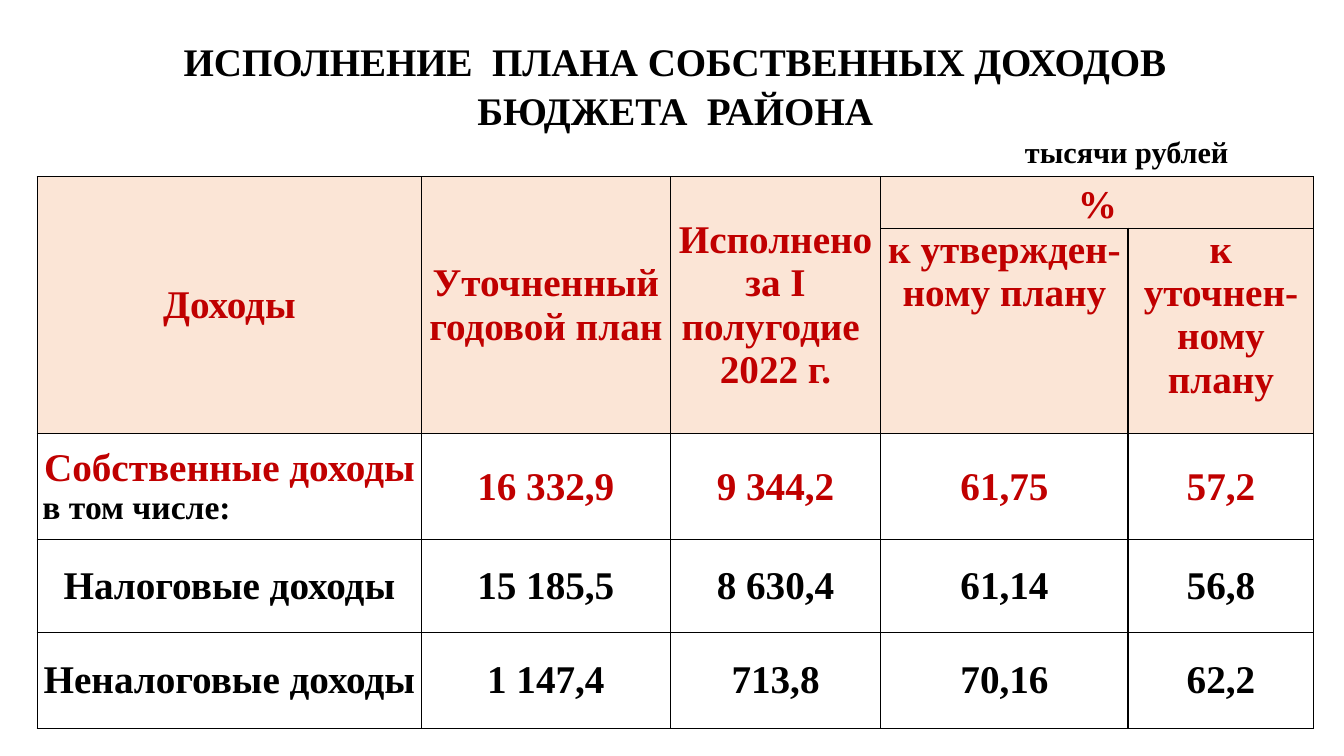
"""Build the slide on execution of the district's own-revenue plan."""
from dataclasses import dataclass
from typing import Any, Optional

import lxml.etree
import pptx
import pptx.dml.color
import pptx.enum.text
import pptx.oxml
import pptx.oxml.ns
import pptx.util

Cm = pptx.util.Cm
Pt = pptx.util.Pt
ALIGN = pptx.enum.text.PP_ALIGN
ANCHOR = pptx.enum.text.MSO_ANCHOR


@dataclass(frozen=True)
class Theme:
    font: str = "Times New Roman"
    black: str = "000000"
    red: str = "C00000"
    header_fill: str = "FBE5D6"
    body_fill: str = "FFFFFF"
    title_size: float = 27.9
    unit_size: float = 21.6
    cell_size: float = 28
    note_size: float = 24
    border_width: float = 1


THEME = Theme()


@dataclass(frozen=True)
class Line:
    text: str
    color: str = THEME.black
    size: float = THEME.cell_size
    align: Any = ALIGN.CENTER
    spacing: Optional[float] = None


@dataclass(frozen=True)
class Entry:
    row: int
    column: int
    lines: tuple[Line, ...]
    anchor: Any = ANCHOR.MIDDLE
    row_span: int = 1
    column_span: int = 1


def heading(text: str, spacing: Optional[float] = None) -> Line:
    return Line(text, THEME.red, spacing=spacing)


COLUMN_WIDTHS = (9.68, 6.27, 5.31, 6.23, 4.68)
ROW_HEIGHTS = (1.3, 5.18, 2.67, 2.34, 2.41)
HEADER_ROWS = 2

TITLE_LINES = (
    Line("ИСПОЛНЕНИЕ  ПЛАНА СОБСТВЕННЫХ ДОХОДОВ БЮДЖЕТА  РАЙОНА",
         size=THEME.title_size, spacing=1.04),
    Line("тысячи рублей", size=THEME.unit_size, align=ALIGN.RIGHT),
)

HEADERS = (
    Entry(0, 0, (heading("Доходы"),), row_span=2),
    Entry(0, 1, (heading("Уточненный годовой план"),), row_span=2),
    Entry(0, 2, (heading("Исполнено за I полугодие  2022 г."),), row_span=2),
    Entry(0, 3, (heading("%", 1.15),), ANCHOR.TOP, column_span=2),
    Entry(1, 3, (heading("к утвержден-"), heading("ному плану")), ANCHOR.TOP),
    Entry(1, 4, (heading("к уточнен-ному плану"),), ANCHOR.TOP),
)

REVENUES = (
    (THEME.red, ("Собственные доходы", "16 332,9", "9 344,2", "61,75", "57,2")),
    (THEME.black, ("Налоговые доходы", "15 185,5", "8 630,4", "61,14", "56,8")),
    (THEME.black, ("Неналоговые доходы", "1 147,4", "713,8", "70,16", "62,2")),
)
INCLUDING = Line("в том числе:", size=THEME.note_size, align=ALIGN.LEFT)


def apply(target: Any, values: dict[str, Any]) -> None:
    for name, value in values.items():
        setattr(target, name, value)


def write_lines(frame: Any, lines: tuple[Line, ...]) -> None:
    for index, line in enumerate(lines):
        para = frame.add_paragraph() if index else frame.paragraphs[0]
        apply(para, {"alignment": line.align, "line_spacing": line.spacing})
        span = para.add_run()
        span.text = line.text
        apply(span.font, {"name": THEME.font, "size": Pt(line.size), "bold": True})
        span.font.color.rgb = pptx.dml.color.RGBColor.from_string(line.color)


def add_title(page: Any) -> None:
    title = page.shapes.title
    apply(title, {"left": Cm(2.41), "top": Cm(0.99),
                  "width": Cm(29.21), "height": Cm(3.18)})
    apply(title.text_frame, {
        "word_wrap": True, "auto_size": pptx.enum.text.MSO_AUTO_SIZE.NONE,
        "vertical_anchor": ANCHOR.MIDDLE,
        "margin_left": Cm(0.66), "margin_right": Cm(0.66),
    })
    write_lines(title.text_frame, TITLE_LINES)


def format_cell(cell: Any, fill: str) -> None:
    apply(cell, {"margin_left": Cm(0.13), "margin_right": Cm(0.13),
                 "margin_top": 0, "margin_bottom": 0})
    cell.fill.solid()
    cell.fill.fore_color.rgb = pptx.dml.color.RGBColor.from_string(fill)
    properties = cell._tc.get_or_add_tcPr()
    for index, side in enumerate(("lnL", "lnR", "lnT", "lnB")):
        border = pptx.oxml.parse_xml(
            f'<a:{side} {pptx.oxml.ns.nsdecls("a")} w="{Pt(THEME.border_width)}">'
            f'<a:solidFill><a:srgbClr val="{THEME.black}"/></a:solidFill></a:{side}>')
        properties.insert(index, border)


def revenue_entries() -> list[Entry]:
    entries = []
    for row, (color, texts) in enumerate(REVENUES, start=HEADER_ROWS):
        for column, text in enumerate(texts):
            lines = (Line(text, color),)
            if (row, column) == (HEADER_ROWS, 0):
                lines += (INCLUDING,)
            entries.append(Entry(row, column, lines))
    return entries


def add_revenue_table(page: Any) -> None:
    table = page.shapes.add_table(
        len(ROW_HEIGHTS), len(COLUMN_WIDTHS), Cm(0.94), Cm(4.45),
        Cm(sum(COLUMN_WIDTHS)), Cm(sum(ROW_HEIGHTS))).table
    apply(table, {"first_row": False, "horz_banding": False})
    for column, width in zip(table.columns, COLUMN_WIDTHS):
        column.width = Cm(width)
    for index, (row, height) in enumerate(zip(table.rows, ROW_HEIGHTS)):
        row.height = Cm(height)
        for cell in row.cells:
            format_cell(cell, THEME.header_fill if index < HEADER_ROWS
                        else THEME.body_fill)
    for entry in [*HEADERS, *revenue_entries()]:
        cell = table.cell(entry.row, entry.column)
        if entry.row_span > 1 or entry.column_span > 1:
            cell.merge(table.cell(entry.row + entry.row_span - 1,
                                  entry.column + entry.column_span - 1))
        cell.vertical_anchor = entry.anchor
        write_lines(cell.text_frame, entry.lines)


def main() -> None:
    deck = pptx.Presentation()
    apply(deck, {"slide_width": Cm(33.87), "slide_height": Cm(19.05)})
    page = deck.slides.add_slide(deck.slide_layouts.get_by_name("Title Only"))
    add_title(page)
    add_revenue_table(page)
    deck.save("out.pptx")


if __name__ == "__main__":
    main()
